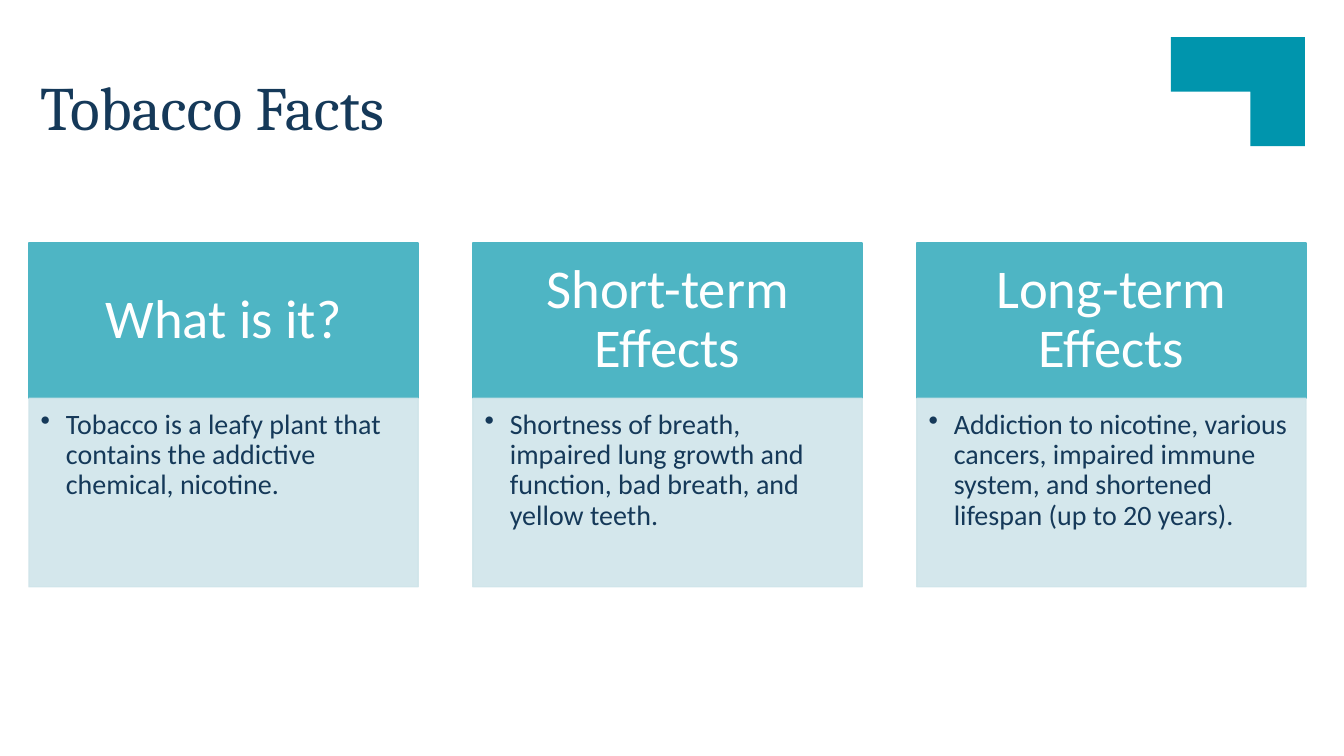
from lxml.etree import SubElement
from pptx import Presentation
from pptx.dml.color import RGBColor
from pptx.enum.shapes import MSO_SHAPE
from pptx.enum.text import MSO_ANCHOR, PP_ALIGN
from pptx.oxml.ns import qn
from pptx.util import Pt

# Content
TITLE = "Tobacco Facts"
FACTS = [
    ("What is it?",
     "Tobacco is a leafy plant that contains the addictive chemical, nicotine."),
    ("Short-term Effects",
     "Shortness of breath, impaired lung growth and function, bad breath, and yellow teeth."),
    ("Long-term Effects",
     "Addiction to nicotine, various cancers, impaired immune system, "
     "and shortened lifespan (up to 20 years)."),
]

# Formats
NAVY, TEAL, AQUA, PALE, WHITE = "153959", "0095AD", "4EB5C4", "D0E5EA", "FFFFFF"
TITLE_FONT = {"name": "Cambria", "size": Pt(44), "color": NAVY}
HEADER_FONT = {"name": "Calibri", "size": Pt(39), "color": WHITE}
BODY_FONT = {"name": "Calibri", "size": Pt(20), "color": NAVY}
HEADER_INSETS = (21.84, 12.48, 21.84, 12.48)
BODY_INSETS = (8.4, 8.4, 11.2, 12.6)

# Layout in points
CORNER_LEFT, CORNER_TOP, CORNER_RIGHT, CORNER_BOTTOM = 836.4, 26.5, 932, 104.3
CORNER_BAND = (CORNER_BOTTOM - CORNER_TOP) / 2
COLUMN_LEFT, COLUMN_PITCH, COLUMN_WIDTH = 20.7, 317.1, 278
HEADER_TOP, HEADER_HEIGHT, BODY_HEIGHT = 173.6, 111, 134.6
BULLET_INDENT = 18


def color(hex_code):
    return RGBColor.from_string(hex_code)


def paint_fill(fill, hex_code):
    fill.solid()
    fill.fore_color.rgb = color(hex_code)


def add_block(page, place, hex_code, opacity=100):
    block = page.shapes.add_shape(MSO_SHAPE.RECTANGLE, *map(Pt, place))
    block.shadow.inherit = False
    for fill in (block.fill, block.line.fill):
        paint_fill(fill, hex_code)
    block.line.width = Pt(1)
    if opacity < 100:
        for node in list(block.element.spPr.iter(qn("a:srgbClr"))):
            SubElement(node, qn("a:alpha"), val=str(opacity * 1000))
    return block


def add_corner(page):
    inner_x, inner_y = CORNER_RIGHT - CORNER_BAND, CORNER_TOP + CORNER_BAND
    outline = [(CORNER_RIGHT, CORNER_TOP), (CORNER_RIGHT, CORNER_BOTTOM),
               (inner_x, CORNER_BOTTOM), (inner_x, inner_y), (CORNER_LEFT, inner_y)]
    builder = page.shapes.build_freeform(Pt(CORNER_LEFT), Pt(CORNER_TOP))
    builder.add_line_segments([(Pt(x), Pt(y)) for x, y in outline], close=True)
    corner = builder.convert_to_shape()
    corner.shadow.inherit = False
    paint_fill(corner.fill, TEAL)
    corner.line.fill.background()


def write(box, text, font, anchor, align, insets=(7.2, 3.6, 7.2, 3.6), bullet=False):
    frame = box.text_frame
    frame.word_wrap = True
    frame.vertical_anchor = anchor
    for side, inset in zip(("left", "top", "right", "bottom"), insets):
        setattr(frame, f"margin_{side}", Pt(inset))
    para = frame.paragraphs[0]
    para.alignment = align
    para.line_spacing = 0.9
    if bullet:
        settings = para._p.get_or_add_pPr()
        settings.set("marL", str(Pt(BULLET_INDENT)))
        settings.set("indent", str(-Pt(BULLET_INDENT)))
        SubElement(settings, qn("a:buChar"), char="•")
    span = para.add_run()
    span.text = text
    for name, value in font.items():
        if name == "color":
            span.font.color.rgb = color(value)
        else:
            setattr(span.font, name, value)


deck = Presentation()
deck.slide_width, deck.slide_height = Pt(960), Pt(540)
page = deck.slides.add_slide(deck.slide_layouts[6])

# Corner ornament and title
add_corner(page)
title_box = page.shapes.add_textbox(Pt(21.6), Pt(26.6), Pt(803.5), Pt(104.4))
write(title_box, TITLE, TITLE_FONT, MSO_ANCHOR.MIDDLE, PP_ALIGN.LEFT)

# Fact columns
for index, (heading, detail) in enumerate(FACTS):
    left = COLUMN_LEFT + index * COLUMN_PITCH
    header = add_block(page, (left, HEADER_TOP, COLUMN_WIDTH, HEADER_HEIGHT), AQUA)
    write(header, heading, HEADER_FONT, MSO_ANCHOR.MIDDLE, PP_ALIGN.CENTER, HEADER_INSETS)
    body = add_block(page, (left, HEADER_TOP + HEADER_HEIGHT, COLUMN_WIDTH, BODY_HEIGHT), PALE, 90)
    write(body, detail, BODY_FONT, MSO_ANCHOR.TOP, PP_ALIGN.LEFT, BODY_INSETS, bullet=True)

deck.save("out.pptx")
